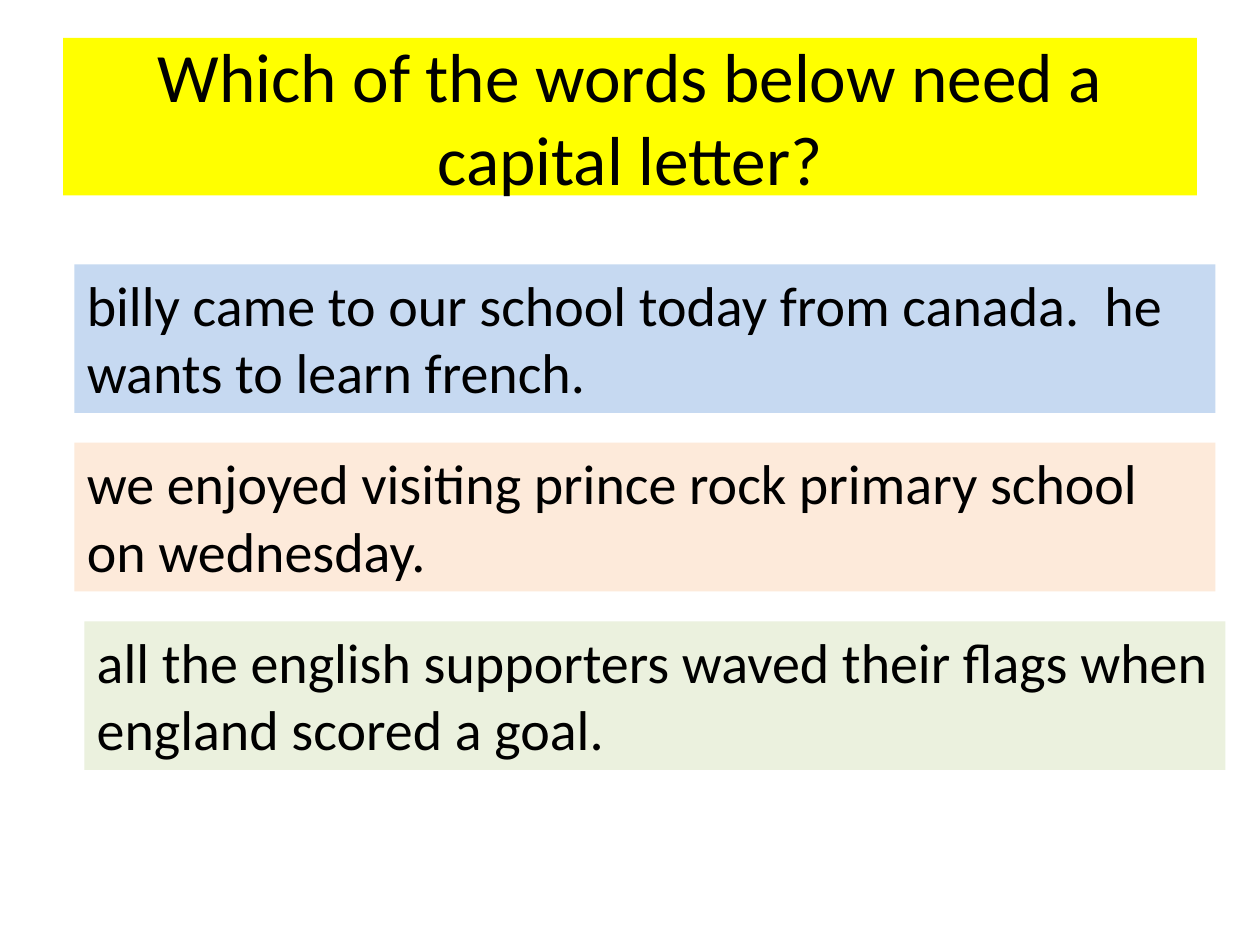
from pptx import Presentation
from pptx.dml.color import RGBColor
from pptx.enum.text import MSO_ANCHOR, MSO_AUTO_SIZE, PP_ALIGN
from pptx.util import Pt


def color(code):
    return RGBColor.from_string(code)


class Deck:
    """Hold the style and the current slide."""

    font = "Calibri"
    ink = "000000"

    def __init__(self):
        self.show = Presentation()
        self.show.slide_width, self.show.slide_height = Pt(720), Pt(540)
        self.slide = self.show.slides.add_slide(self.show.slide_layouts[5])

    def label(self, shape, text, size, align):
        line = shape.text_frame.paragraphs[0]
        line.alignment = align
        run = line.add_run()
        run.text = text
        run.font.name = self.font
        run.font.size = Pt(size)
        run.font.color.rgb = color(self.ink)

    def paint(self, shape, fill):
        shape.fill.solid()
        shape.fill.fore_color.rgb = color(fill)

    def title(self, text, fill, left, top, width, height):
        shape = self.slide.shapes.title
        shape.left, shape.top = Pt(left), Pt(top)
        shape.width, shape.height = Pt(width), Pt(height)
        shape.text_frame.auto_size = MSO_AUTO_SIZE.NONE
        shape.text_frame.vertical_anchor = MSO_ANCHOR.MIDDLE
        self.paint(shape, fill)
        self.label(shape, text, 39.6, PP_ALIGN.CENTER)

    def box(self, text, fill, left, top, width, height):
        shape = self.slide.shapes.add_textbox(Pt(left), Pt(top), Pt(width), Pt(height))
        shape.text_frame.word_wrap = True
        shape.text_frame.auto_size = MSO_AUTO_SIZE.SHAPE_TO_FIT_TEXT
        self.paint(shape, fill)
        self.label(shape, text, 32, PP_ALIGN.LEFT)


def main():
    deck = Deck()
    deck.title("Which of the words below need a capital letter?", "FFFF00", 36, 21.6, 648, 90)
    tasks = [
        ("billy came to our school today from canada.  he wants to learn french.", "C6D9F1", 42.5),
        ("we enjoyed visiting prince rock primary school on wednesday.", "FDEADA", 42.5),
        ("all the english supporters waved their flags when england scored a goal.", "EBF1DE", 48.2),
    ]
    for row, (text, fill, left) in enumerate(tasks):
        deck.box(text, fill, left, 151 + row * 102, 652, 85)
    deck.show.save("out.pptx")


if __name__ == "__main__":
    main()
